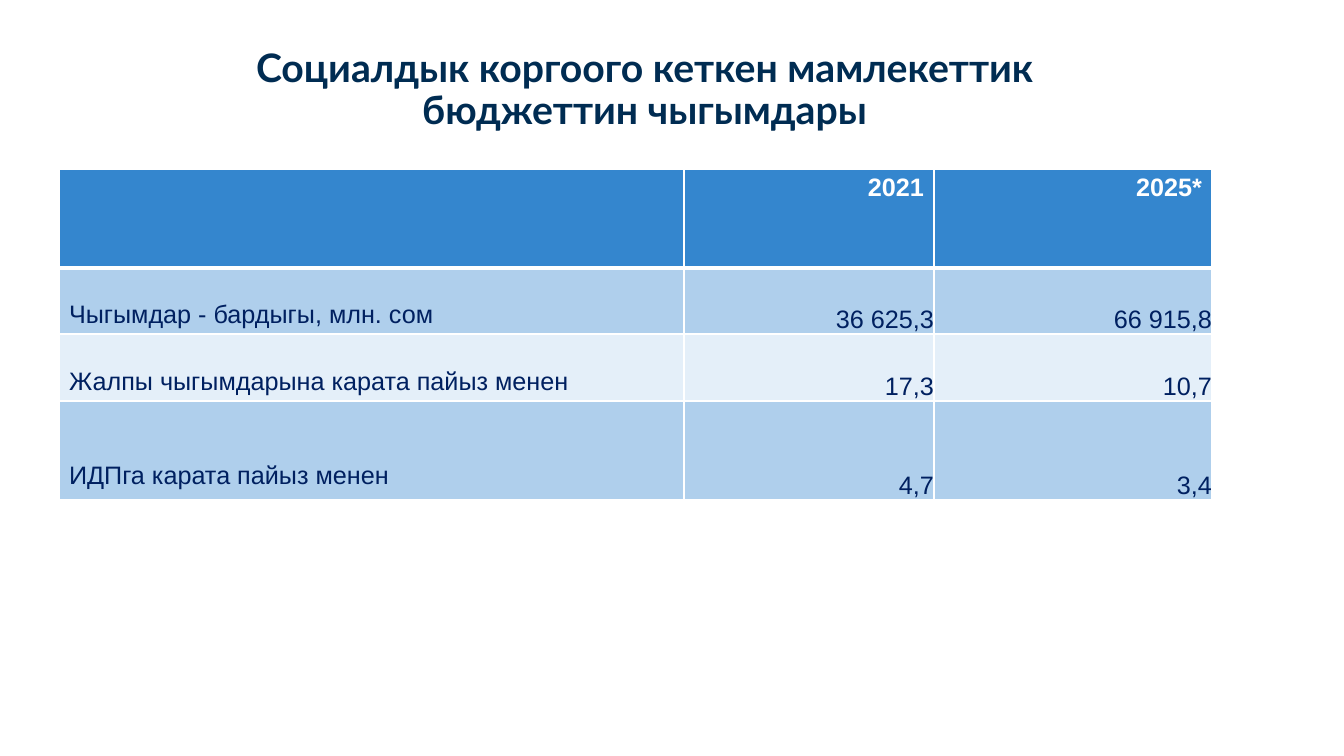
from dataclasses import dataclass

from lxml.etree import SubElement
from pptx import Presentation
from pptx.dml.color import RGBColor
from pptx.enum.text import MSO_ANCHOR as Anchor, PP_ALIGN as Align
from pptx.oxml.ns import qn
from pptx.util import Emu, Pt

PX_PER_INCH = 100.8


def px(length):
    return Emu(round(length * 914400 / PX_PER_INCH))


@dataclass(frozen=True)
class Theme:
    title_font: str = "Lato"
    body_font: str = "Arial"
    title_size: int = 28
    body_size: int = 18
    title_color: str = "002C52"
    body_color: str = "002060"
    white: str = "FFFFFF"
    header_fill: str = "3486CE"
    bands: tuple = ("AFCFEC", "E4EFF9")
    thin_rule: int = 1
    header_rule: int = 3


class SlideBuilder:
    def __init__(self, slide, theme):
        self.slide = slide
        self.theme = theme

    def set_text(self, frame, text, font, size, color, align, bold=False):
        frame.text = text
        paragraph = frame.paragraphs[0]
        paragraph.alignment = align
        style = paragraph.runs[0].font if text else paragraph.font
        style.name, style.size, style.bold = font, Pt(size), bold
        style.color.rgb = RGBColor.from_string(color)
        return paragraph

    def title(self, text, left, top, width, height):
        theme = self.theme
        box = self.slide.shapes.add_textbox(*map(px, (left, top, width, height)))
        frame = box.text_frame
        frame.word_wrap = True
        frame.vertical_anchor = Anchor.MIDDLE
        heading = self.set_text(frame, text, theme.title_font, theme.title_size,
                                theme.title_color, Align.CENTER, bold=True)
        heading.line_spacing = 0.9

    def borders(self, cell, top, bottom):
        properties = cell._tc.get_or_add_tcPr()
        thin = self.theme.thin_rule
        for side, width in (("L", thin), ("R", thin), ("T", top), ("B", bottom)):
            line = SubElement(properties, qn(f"a:ln{side}"), w=str(Pt(width)))
            fill = SubElement(line, qn("a:solidFill"))
            SubElement(fill, qn("a:srgbClr"), val=self.theme.white)

    def cell(self, cell, text, row, column, label_gap):
        theme = self.theme
        header = row == 0
        # Rules go in ahead of the fill, as the schema orders them
        self.borders(cell,
                     top=theme.header_rule if row == 1 else theme.thin_rule,
                     bottom=theme.header_rule if header else theme.thin_rule)
        cell.fill.solid()
        fill = theme.header_fill if header else theme.bands[(row - 1) % 2]
        cell.fill.fore_color.rgb = RGBColor.from_string(fill)
        if not header:
            cell.vertical_anchor = Anchor.BOTTOM
            if column == 0:
                cell.margin_bottom = px(label_gap)
            else:
                cell.margin_left = cell.margin_right = 0
                cell.margin_top = cell.margin_bottom = 0
        self.set_text(cell.text_frame, text, theme.body_font, theme.body_size,
                      theme.white if header else theme.body_color,
                      Align.RIGHT if column else Align.LEFT, bold=header)

    def table(self, rows, left, top, widths, heights, label_gaps):
        area = map(px, (left, top, sum(widths), sum(heights)))
        table = self.slide.shapes.add_table(len(rows), len(widths), *area).table
        for column, width in zip(table.columns, widths):
            column.width = px(width)
        for row, height in zip(table.rows, heights):
            row.height = px(height)
        for r, texts in enumerate(rows):
            for c, text in enumerate(texts):
                self.cell(table.cell(r, c), text, r, c, label_gaps[r])


def main():
    deck = Presentation()
    deck.slide_width, deck.slide_height = px(1344), px(756)
    builder = SlideBuilder(deck.slides.add_slide(deck.slide_layouts[6]), Theme())

    # Heading
    builder.title("Социалдык коргоого кеткен мамлекеттик бюджеттин чыгымдары",
                  160, 40, 969, 102)

    # Social protection spending by year
    spending = [
        ("", "2021", "2025*"),
        ("Чыгымдар - бардыгы, млн. сом", "36 625,3", "66 915,8"),
        ("Жалпы чыгымдарына карата пайыз менен", "17,3", "10,7"),
        ("ИДПга карата пайыз менен", "4,7", "3,4"),
    ]
    builder.table(spending, 59, 169, widths=(625, 250, 278),
                  heights=(99, 66, 67, 99), label_gaps=(5, 5, 5, 10))

    deck.save("out.pptx")


if __name__ == "__main__":
    main()
